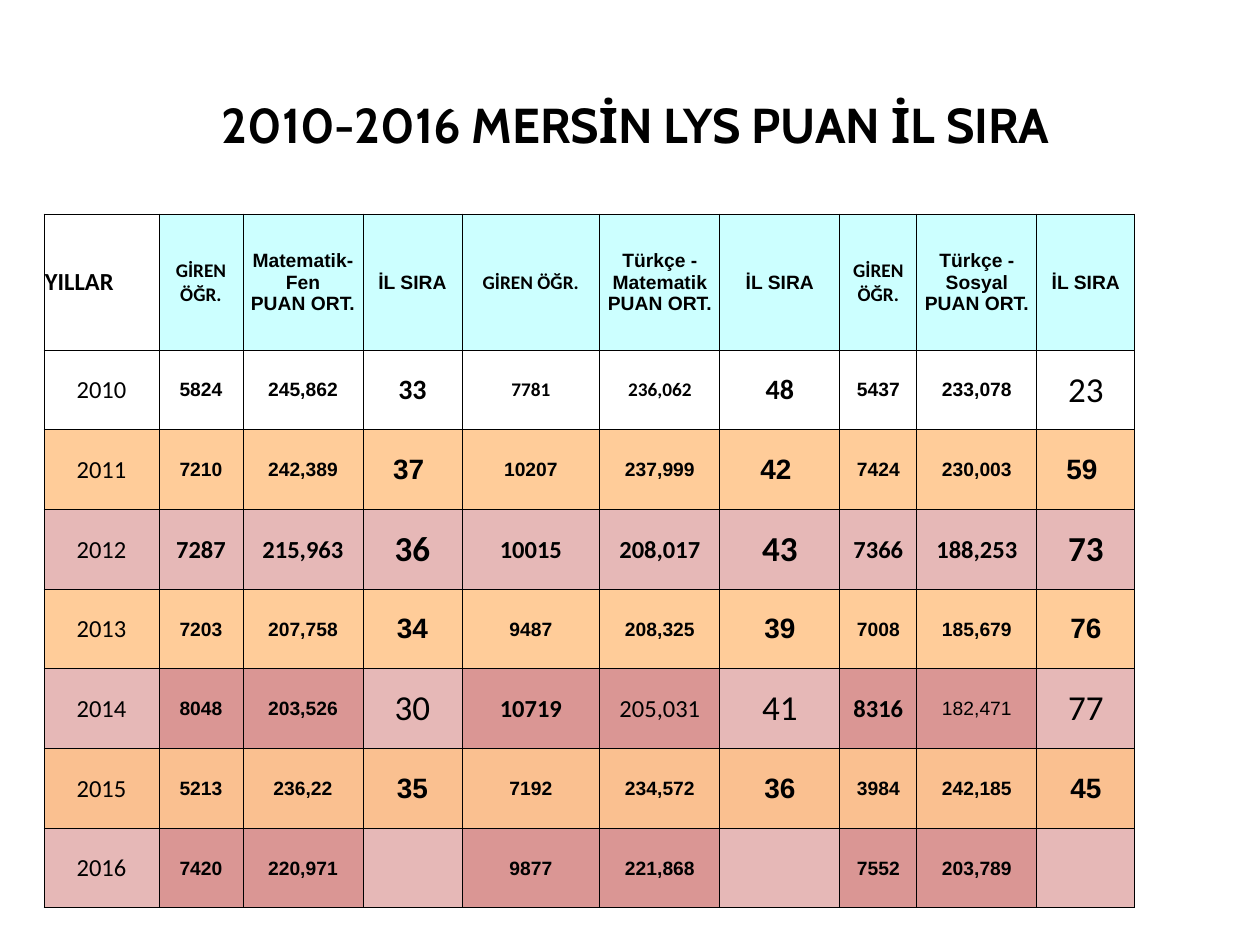
from lxml import etree
from pptx import Presentation
from pptx.dml.color import RGBColor
from pptx.enum.text import MSO_ANCHOR, MSO_AUTO_SIZE, PP_ALIGN
from pptx.oxml.ns import qn
from pptx.util import Pt

PX = 914400 // 126
LEFT, CENTER = PP_ALIGN.LEFT, PP_ALIGN.CENTER
MIDDLE = MSO_ANCHOR.MIDDLE
NO_AUTOFIT = MSO_AUTO_SIZE.NONE

COLORS = {
    "black": "000000",
    "cyan": "CCFFFF",
    "orange": "FFCC99",
    "deep orange": "FAC090",
    "pink": "E6B8B7",
    "rose": "DA9694",
}

TITLE = "2010-2016 MERSİN LYS PUAN İL SIRA"
TITLE_BOX = (69, 88, 1123, 72)
TITLE_MARGINS = (22, 6, 12, 6)

TABLE_LEFT, TABLE_TOP, TABLE_HEIGHT = 44, 214, 694
HEADER_HEIGHT = 136
COLUMN_WIDTHS = [115, 84, 120, 99, 138, 120, 120, 77, 120, 98]
CELL_MARGINS = (1, 1, 1, 0)

STYLES = {
    "y": ("Calibri", 14, False),
    "Y": ("Calibri", 14, True),
    "c": ("Calibri", 11, True),
    "C": ("Calibri", 16, True),
    "l": ("Calibri", 20, False),
    "L": ("Calibri", 20, True),
    "r": ("Arial", 11, False),
    "a": ("Arial", 11, True),
    "A": ("Arial", 16, True),
}
USUAL = "yaaAaaAaaA"

# Each row: cell texts, cell styles, fills of year, value and rank cells
ROWS = [
    (["YILLAR", "GİREN ÖĞR.", "Matematik-Fen\nPUAN ORT.", "İL SIRA",
      "GİREN ÖĞR.", "Türkçe - Matematik PUAN ORT.", "İL SIRA",
      "GİREN ÖĞR.", "Türkçe - Sosyal PUAN ORT.", "İL SIRA"],
     "Ycaacaacaa", (None, "cyan", "cyan")),
    (["2010", "5824", "245,862", "33", "7781", "236,062", "48", "5437", "233,078", "23"],
     "yaaCccCaal", (None, None, None)),
    (["2011", "7210", "242,389", "37 ", "10207", "237,999", "42 ", "7424", "230,003", "59 "],
     USUAL, ("orange", "orange", "orange")),
    (["2012", "7287", "215,963", "36", "10015", "208,017", "43", "7366", "188,253", "73"],
     "yYYLYYLYYL", ("pink", "pink", "pink")),
    (["2013", "7203", "207,758", "34", "9487", "208,325", "39", "7008", "185,679", "76"],
     USUAL, ("orange", "orange", "orange")),
    (["2014", "8048", "203,526", "30", "10719", "205,031", "41", "8316", "182,471", "77"],
     "yaalYylYrl", ("pink", "rose", "pink")),
    (["2015", "5213", "236,22", "35", "7192", "234,572", "36", "3984", "242,185", "45"],
     USUAL, ("deep orange", "deep orange", "deep orange")),
    (["2016", "7420", "220,971", "", "9877", "221,868", "", "7552", "203,789", ""],
     USUAL, ("pink", "rose", "pink")),
]


def set_margins(target, margins):
    target.margin_left, target.margin_top, target.margin_right, target.margin_bottom = (
        margin * PX for margin in margins)


def add_run(paragraph, text, font_name, size, bold):
    run = paragraph.add_run()
    run.text = text
    run.font.name = font_name
    run.font.size = Pt(size)
    run.font.bold = bold
    run.font.color.rgb = RGBColor.from_string(COLORS["black"])


def add_borders(cell):
    properties = cell._tc.get_or_add_tcPr()
    for side in ("a:lnL", "a:lnR", "a:lnT", "a:lnB"):
        line = etree.SubElement(properties, qn(side), w=str(Pt(0.5)))
        fill = etree.SubElement(line, qn("a:solidFill"))
        etree.SubElement(fill, qn("a:srgbClr"), val=COLORS["black"])


def fill_cell(cell, text, style, color, alignment):
    set_margins(cell, CELL_MARGINS)
    cell.vertical_anchor = MIDDLE
    add_borders(cell)
    if color:
        cell.fill.solid()
        cell.fill.fore_color.rgb = RGBColor.from_string(COLORS[color])
    else:
        cell.fill.background()
    if not text:
        return
    for index, line in enumerate(text.split("\n")):
        frame = cell.text_frame
        paragraph = frame.add_paragraph() if index else frame.paragraphs[0]
        paragraph.alignment = alignment
        add_run(paragraph, line, *STYLES[style])


def add_title(slide):
    title = slide.shapes.title
    title.left, title.top, title.width, title.height = (value * PX for value in TITLE_BOX)
    frame = title.text_frame
    frame.auto_size = NO_AUTOFIT
    frame.word_wrap = True
    frame.vertical_anchor = MIDDLE
    set_margins(frame, TITLE_MARGINS)
    frame.paragraphs[0].alignment = CENTER
    add_run(frame.paragraphs[0], TITLE, "Cabin", 28, True)


def add_score_table(slide):
    table = slide.shapes.add_table(
        len(ROWS), len(COLUMN_WIDTHS), TABLE_LEFT * PX, TABLE_TOP * PX,
        sum(COLUMN_WIDTHS) * PX, TABLE_HEIGHT * PX).table
    table.first_row = False
    table.horz_banding = False
    for column, width in zip(table.columns, COLUMN_WIDTHS):
        column.width = width * PX
    year_height = (TABLE_HEIGHT - HEADER_HEIGHT) * PX // (len(ROWS) - 1)
    for row_index, (texts, styles, fills) in enumerate(ROWS):
        table.rows[row_index].height = year_height if row_index else HEADER_HEIGHT * PX
        year_fill, value_fill, rank_fill = fills
        for column_index, (text, style) in enumerate(zip(texts, styles)):
            if column_index == 0:
                color = year_fill
            else:
                color = value_fill if column_index % 3 else rank_fill
            alignment = CENTER if row_index or column_index else LEFT
            fill_cell(table.cell(row_index, column_index), text, style, color, alignment)


def main():
    presentation = Presentation()
    presentation.slide_width = 1260 * PX
    presentation.slide_height = 945 * PX
    slide = presentation.slides.add_slide(presentation.slide_layouts[5])
    add_title(slide)
    add_score_table(slide)
    presentation.save("out.pptx")


if __name__ == "__main__":
    main()
